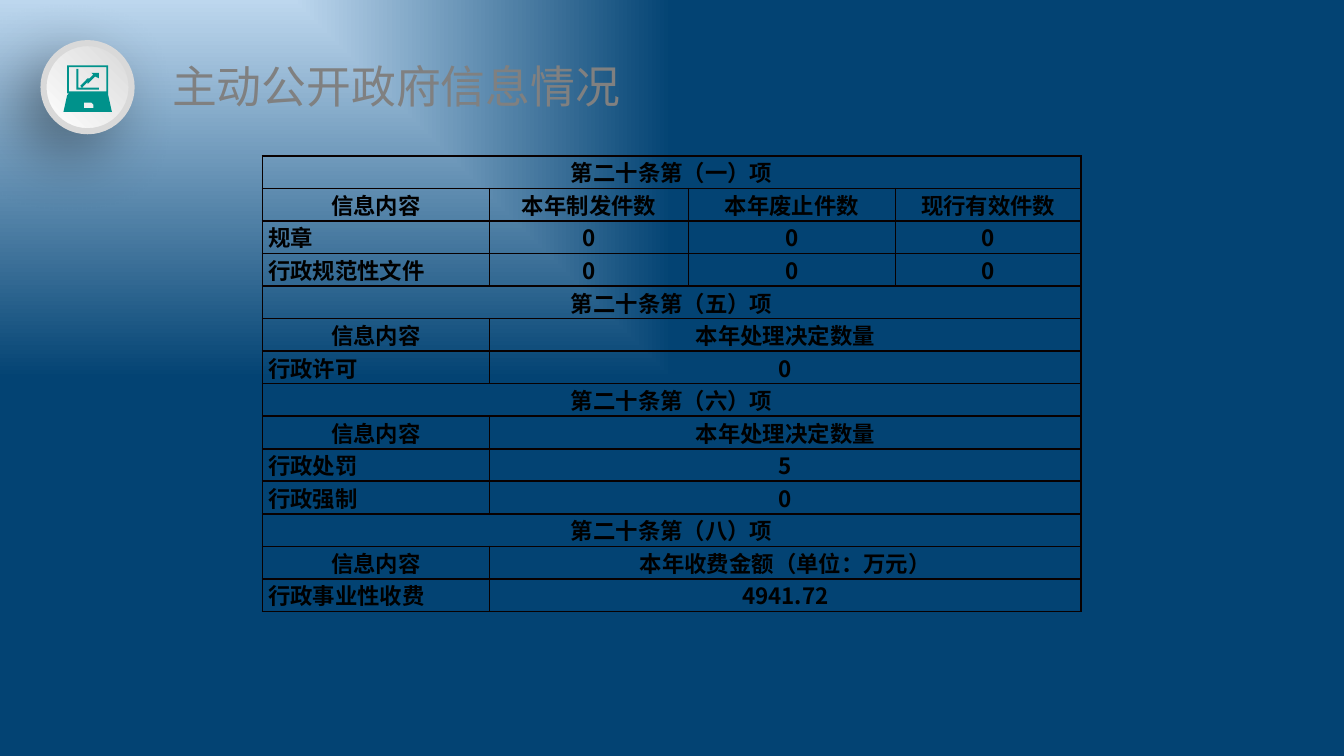
"""Build the slide on proactively disclosed government information."""
from typing import NamedTuple

from pptx import Presentation
from pptx.dml.color import RGBColor
from pptx.enum.shapes import MSO_SHAPE
from pptx.enum.text import MSO_ANCHOR, PP_ALIGN
from pptx.oxml import parse_xml
from pptx.oxml.ns import nsdecls, qn
from pptx.util import Pt

COLORS = {
    "sky": "BDD7EE", "navy": "034373", "title": "808080", "white": "FFFFFF",
    "silver": "D9D9D9", "teal": "00928B", "border": "080000", "black": "000000",
}
COLUMN_WIDTHS = (121.7, 106.6, 110.9, 99.4)
ROW_HEIGHT = 17


class Row(NamedTuple):
    cells: tuple[str, ...]
    heading: bool = False


class Outline(NamedTuple):
    points: tuple[tuple[float, float], ...]


def rectangle(left: float, top: float, right: float, bottom: float) -> Outline:
    return Outline(((left, top), (right, top), (right, bottom), (left, bottom)))


ROWS = (
    Row(("第二十条第（一）项",), True),
    Row(("信息内容", "本年制发件数", "本年废止件数", "现行有效件数"), True),
    Row(("规章", "0", "0", "0")),
    Row(("行政规范性文件", "0", "0", "0")),
    Row(("第二十条第（五）项",), True),
    Row(("信息内容", "本年处理决定数量"), True),
    Row(("行政许可", "0")),
    Row(("第二十条第（六）项",), True),
    Row(("信息内容", "本年处理决定数量"), True),
    Row(("行政处罚", "5")),
    Row(("行政强制", "0")),
    Row(("第二十条第（八）项",), True),
    Row(("信息内容", "本年收费金额（单位：万元）"), True),
    Row(("行政事业性收费", "4941.72")),
)
LAPTOP = (
    rectangle(36, 34.7, 58.4, 49.9),
    rectangle(37, 36, 57.4, 48.9),
    Outline(((41.4, 36.8), (41.8, 36.8), (41.8, 47.3), (52.6, 47.3), (52.6, 47.7), (41.4, 47.7))),
    Outline(((52.6, 38.6), (52.6, 42.5), (51.3, 41.2), (47.4, 44.9), (46.6, 43.5),
             (43.9, 46.6), (42.8, 45.5), (46.6, 41.5), (47.7, 42.5), (50.2, 40.1), (48.9, 38.6))),
    Outline(((36.8, 50.4), (57.6, 50.4), (58.2, 51), (60.4, 59.6), (59.8, 60.4),
             (34.5, 60.4), (33.9, 59.6), (36.2, 51))),
    Outline(((45.2, 55.4), (49.1, 55.4), (49.7, 56.2), (49.7, 58.3), (44.6, 58.3), (44.6, 56.2))),
)


def color(name: str) -> RGBColor:
    return RGBColor.from_string(COLORS[name])


def set_gradient(fill, first: str, last: str) -> None:
    fill.gradient()
    for stop, name, position in zip(fill.gradient_stops, (first, last), (0, 1)):
        stop.color.rgb = color(name)
        stop.position = position


def draw_background(page) -> None:
    set_gradient(page.background.fill, "sky", "navy")
    gradient = page.element.find(".//" + qn("a:gradFill"))
    gradient.replace(gradient.find(qn("a:lin")), parse_xml(
        f'<a:path {nsdecls("a")} path="rect"><a:fillToRect r="100000" b="100000"/></a:path>'))


def draw_title(page, text: str) -> None:
    box = page.shapes.title
    box.left, box.top, box.width, box.height = Pt(85), Pt(28.1), Pt(334), Pt(36)
    frame = box.text_frame
    frame.text = text
    frame.vertical_anchor = MSO_ANCHOR.MIDDLE
    paragraph = frame.paragraphs[0]
    paragraph.alignment = PP_ALIGN.LEFT
    paragraph.font.size = Pt(24)
    paragraph.font.name = "Arial"
    paragraph.font.color.rgb = color("title")


def draw_badge(page) -> None:
    badge = page.shapes.add_shape(MSO_SHAPE.OVAL, Pt(23.3), Pt(23.1), Pt(47.2), Pt(47.2))
    set_gradient(badge.fill, "white", "silver")
    badge.fill.gradient_angle = 45
    badge.line.color.rgb = color("silver")
    badge.line.width = Pt(3.25)
    badge.shadow.inherit = False
    badge.element.spPr.find(qn("a:effectLst")).append(parse_xml(
        f'<a:outerShdw {nsdecls("a")} blurRad="{Pt(35)}" dist="{Pt(15)}" dir="8100000">'
        f'<a:srgbClr val="{COLORS["black"]}"><a:alpha val="40000"/></a:srgbClr></a:outerShdw>'))


def draw_icon(page, outlines: tuple[Outline, ...]) -> None:
    builder = page.shapes.build_freeform(*outlines[0].points[0], scale=Pt(1))
    for outline in outlines:
        builder.move_to(*outline.points[0])
        builder.add_line_segments(outline.points[1:], close=True)
    icon = builder.convert_to_shape()
    icon.fill.solid()
    icon.fill.fore_color.rgb = color("teal")
    icon.line.fill.background()
    icon.shadow.inherit = False


def format_cell(cell, alignment: PP_ALIGN) -> None:
    properties = cell._tc.get_or_add_tcPr()
    for side in ("lnL", "lnR", "lnT", "lnB"):
        properties.append(parse_xml(
            f'<a:{side} {nsdecls("a")} w="{Pt(1)}"><a:solidFill>'
            f'<a:srgbClr val="{COLORS["border"]}"/></a:solidFill></a:{side}>'))
    cell.fill.background()
    cell.margin_left = cell.margin_right = Pt(3)
    cell.margin_top = cell.margin_bottom = 0
    cell.vertical_anchor = MSO_ANCHOR.MIDDLE
    paragraph = cell.text_frame.paragraphs[0]
    paragraph.alignment = alignment
    paragraph.font.size = Pt(12)
    paragraph.font.bold = True
    paragraph.font.name = "Noto Sans CJK SC"
    paragraph.font.color.rgb = color("black")


def draw_table(page, rows: tuple[Row, ...]) -> None:
    last = len(COLUMN_WIDTHS) - 1
    table = page.shapes.add_table(
        len(rows), len(COLUMN_WIDTHS), Pt(140.6), Pt(83.5),
        Pt(sum(COLUMN_WIDTHS)), Pt(ROW_HEIGHT * len(rows))).table
    table.first_row = table.horz_banding = False
    for column, width in zip(table.columns, COLUMN_WIDTHS):
        column.width = Pt(width)
    for index, row in enumerate(rows):
        table.rows[index].height = Pt(ROW_HEIGHT)
        for position, text in enumerate(row.cells):
            table.cell(index, position).text = text
        for position in range(last + 1):
            left = position == 0 and not row.heading
            format_cell(table.cell(index, position), PP_ALIGN.LEFT if left else PP_ALIGN.CENTER)
        end = len(row.cells) - 1
        if end < last:
            table.cell(index, end).merge(table.cell(index, last))


def main() -> None:
    deck = Presentation()
    deck.slide_width, deck.slide_height = Pt(720), Pt(405)
    page = deck.slides.add_slide(deck.slide_layouts[5])
    draw_background(page)
    draw_title(page, "主动公开政府信息情况")
    draw_badge(page)
    draw_icon(page, LAPTOP)
    draw_table(page, ROWS)
    deck.save("out.pptx")


if __name__ == "__main__":
    main()
